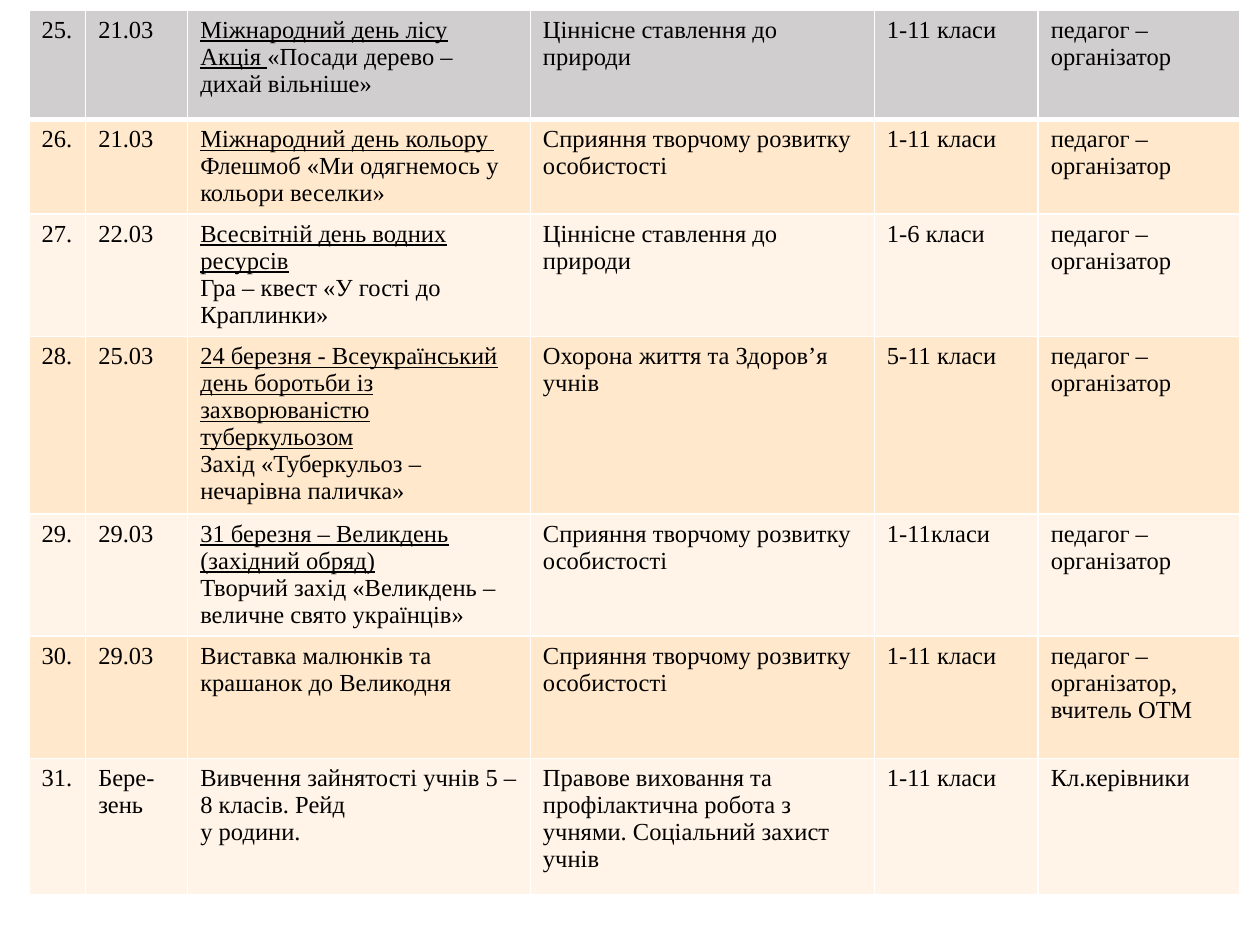
"""Builds a slide with the school events table for late March."""
from lxml.etree import SubElement
from pptx import Presentation
from pptx.dml.color import RGBColor
from pptx.oxml.ns import qn
from pptx.util import Inches, Pt

BLACK = RGBColor(0, 0, 0)
GREY = RGBColor(0xD0, 0xCE, 0xCE)
PEACH = RGBColor(0xFF, 0xE8, 0xCC)
CREAM = RGBColor(0xFF, 0xF4, 0xE7)
FONT = "Times New Roman"

WIDTHS = [0.45, 0.81, 2.72, 2.73, 1.3, 1.6]
HEIGHTS = [0.87, 0.75, 0.97, 1.41, 0.97, 0.97, 1.08]
NATURE = "Ціннісне ставлення до природи"
CREATIVE = "Сприяння творчому розвитку особистості"
ALL_CLASSES = "1-11 класи"
ORGANIZER = "педагог –організатор"

EVENTS = [
    ("25.", "21.03",
     [[("Міжнародний день лісу\vАкція ", True), ("«Посади дерево – дихай вільніше»", False)]],
     NATURE, ALL_CLASSES, ORGANIZER),
    ("26.", "21.03",
     [[("Міжнародний день кольору \v", True), ("Флешмоб «Ми одягнемось у кольори веселки»", False)]],
     CREATIVE, ALL_CLASSES, ORGANIZER),
    ("27.", "22.03",
     [[("Всесвітній день водних ресурсів\v", True), ("Гра – квест «У гості до Краплинки»", False)]],
     NATURE, "1-6 класи", ORGANIZER),
    ("28.", "25.03",
     [[("24 березня - Всеукраїнський день боротьби iз захворюваністю туберкульозом\v", True),
       ("Захід «Туберкульоз – нечарівна паличка»", False)]],
     "Охорона життя та Здоров’я учнів", "5-11 класи", ORGANIZER),
    ("29.", "29.03",
     [[("31 березня – Великдень (західний обряд)", True)],
      [("Творчий захід «Великдень – величне свято українців»", False)]],
     CREATIVE, "1-11класи", ORGANIZER),
    ("30.", "29.03",
     [[("Виставка малюнків та крашанок до Великодня", False)]],
     CREATIVE, ALL_CLASSES, ORGANIZER + ", вчитель ОТМ"),
    ("31.", "Бере-зень",
     [[("Вивчення зайнятості учнів 5 – 8 класів. Рейд", False)], [("у родини.", False)]],
     "Правове виховання та профілактична робота з учнями. Соціальний захист учнів",
     ALL_CLASSES, "Кл.керівники"),
]


def style_font(font):
    font.name = FONT
    font.size = Pt(14)
    font.bold = False
    font.color.rgb = BLACK


def add_borders(cell, widths):
    tcPr = cell._tc.get_or_add_tcPr()
    for i, (side, width) in enumerate(widths.items()):
        ln = SubElement(tcPr, qn(f"a:ln{side}"), w=str(Pt(width)))
        fill = SubElement(ln, qn("a:solidFill"))
        SubElement(fill, qn("a:srgbClr"), val="FFFFFF")
        tcPr.insert(i, ln)


prs = Presentation()
prs.slide_width, prs.slide_height = Inches(10), Inches(7.5)
s = prs.slides.add_slide(prs.slide_layouts[6])
table = s.shapes.add_table(len(HEIGHTS), len(WIDTHS), Inches(0.23), Inches(0.08),
                           Inches(sum(WIDTHS)), Inches(sum(HEIGHTS))).table
for column, width in zip(table.columns, WIDTHS):
    column.width = Inches(width)

for i, (event, height) in enumerate(zip(EVENTS, HEIGHTS)):
    table.rows[i].height = Inches(height)
    color = GREY if i == 0 else PEACH if i % 2 else CREAM
    for j, content in enumerate(event):
        cell = table.cell(i, j)
        cell.fill.solid()
        cell.fill.fore_color.rgb = color
        add_borders(cell, {"L": 1, "R": 1, "T": 3 if i == 1 else 1, "B": 3 if i == 0 else 1})
        paragraphs = [[(content, False)]] if isinstance(content, str) else content
        tf = cell.text_frame
        for k, parts in enumerate(paragraphs):
            p = tf.add_paragraph() if k else tf.paragraphs[0]
            style_font(p.font)
            for text, underlined in parts:
                for n, line in enumerate(text.split("\v")):
                    if n:
                        p.add_line_break()
                    if line:
                        r = p.add_run()
                        r.text = line
                        style_font(r.font)
                        r.font.underline = underlined

prs.save("out.pptx")
